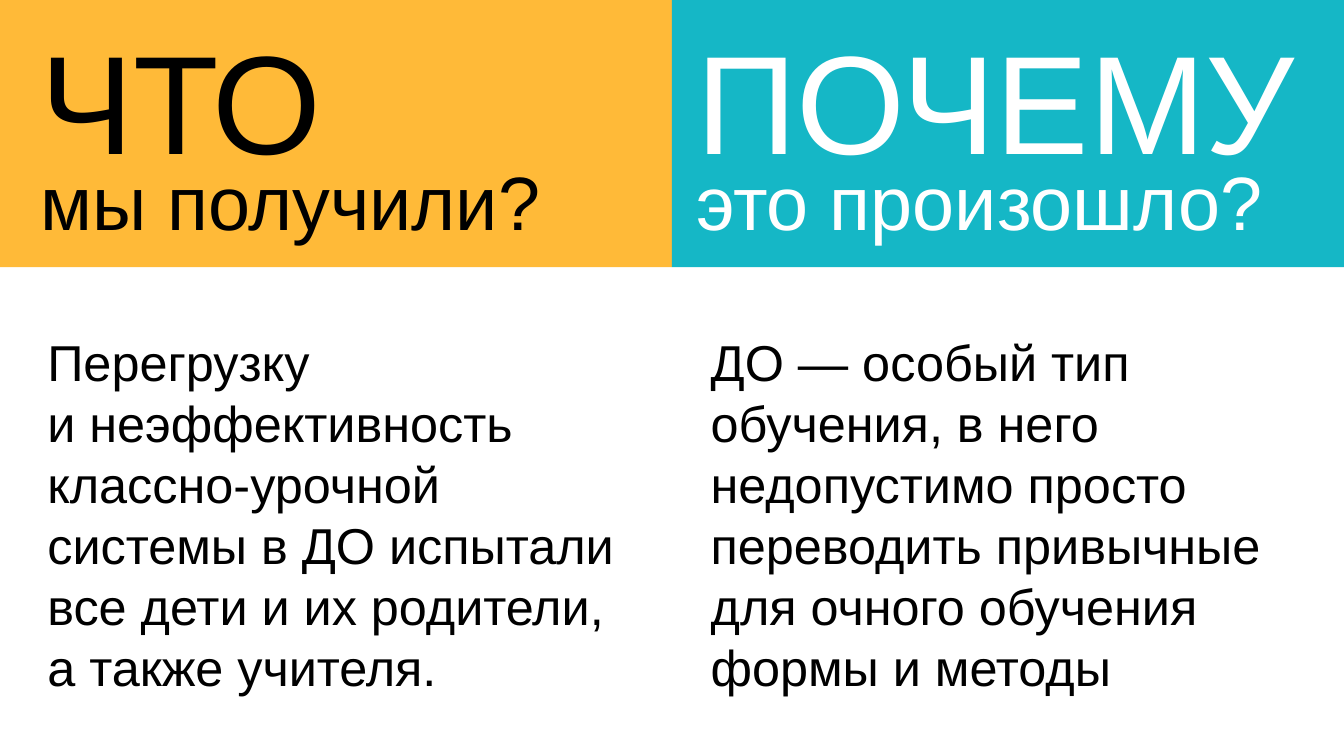
from pptx import Presentation
from pptx.dml.color import RGBColor
from pptx.enum.shapes import MSO_SHAPE
from pptx.enum.text import MSO_ANCHOR, MSO_AUTO_SIZE, PP_ALIGN
from pptx.oxml.ns import qn
from pptx.util import Pt

RECTANGLE = MSO_SHAPE.RECTANGLE
TOP = MSO_ANCHOR.TOP
FIXED = MSO_AUTO_SIZE.NONE
LEFT = PP_ALIGN.LEFT

ORANGE = RGBColor(0xFF, 0xBA, 0x38)
TEAL = RGBColor(0x15, 0xB7, 0xC6)
BLACK = RGBColor(0x00, 0x00, 0x00)
WHITE = RGBColor(0xFF, 0xFF, 0xFF)

SLIDE_W, SLIDE_H = 960, 540
HEADER_H = 190.8
LINE_RATIO = 1.21
TWO_CONTENT = 3


def apply_format(obj, values):
    for name, value in values.items():
        setattr(obj, name, value)


def place(sp, left, top, width, height):
    apply_format(sp, {"left": Pt(left), "top": Pt(top),
                      "width": Pt(width), "height": Pt(height)})


def add_header_band(slide, left, color):
    sp = slide.shapes.add_shape(RECTANGLE, Pt(left), Pt(0),
                                Pt(SLIDE_W / 2), Pt(HEADER_H))
    sp.shadow.inherit = False
    sp.fill.solid()
    sp.fill.fore_color.rgb = color
    sp.line.fill.background()
    # Send the band behind the placeholders
    tree = slide.shapes._spTree
    tree.remove(sp._element)
    tree.insert(2, sp._element)


def write_text(sp, text, size, color, wrap=True):
    tf = sp.text_frame
    tf.text = text
    apply_format(tf, {"word_wrap": wrap, "auto_size": FIXED,
                      "vertical_anchor": TOP})
    p = tf.paragraphs[0]
    apply_format(p, {"alignment": LEFT, "space_before": Pt(0),
                     "line_spacing": Pt(size * LINE_RATIO)})
    for r in p.runs:
        apply_format(r.font, {"name": "Arial", "size": Pt(size)})
        r.font.color.rgb = color


def fill_placeholder(sp, box, text, size, color):
    place(sp, *box)
    write_text(sp, text, size, color)


def remove_bullet(sp):
    pPr = sp.text_frame.paragraphs[0]._p.get_or_add_pPr()
    pPr.set("marL", "0")
    pPr.set("indent", "0")
    pPr.append(pPr.makeelement(qn("a:buNone"), {}))


def add_label(slide, box, text, size, color, wrap=True):
    sp = slide.shapes.add_textbox(*map(Pt, box))
    write_text(sp, text, size, color, wrap)


def main():
    prs = Presentation()
    prs.slide_width, prs.slide_height = Pt(SLIDE_W), Pt(SLIDE_H)
    slide = prs.slides.add_slide(prs.slide_layouts[TWO_CONTENT - 0])
    title, what_body, why_body = list(slide.placeholders)[:3]

    # Header bands
    add_header_band(slide, SLIDE_W / 2, TEAL)
    add_header_band(slide, 0, ORANGE)

    # Large question words
    fill_placeholder(title, (21.6, 5.8, 216, 128), "ЧТО", 100, BLACK)
    add_label(slide, (490.3, 5.8, 446.4, 128), "ПОЧЕМУ", 100, WHITE, wrap=False)

    # Rest of each question
    for left, text, color in ((21.6, "мы получили?", BLACK),
                              (490.3, "это произошло?", WHITE)):
        add_label(slide, (left, 106.6, 460, 72.7), text, 54, color)

    # Answers
    answers = (
        (what_body, 26.6, 430.6,
         "Перегрузку \vи неэффективность классно-урочной системы в ДО "
         "испытали все дети и их родители, а также учителя."),
        (why_body, 500.4, 439.2,
         "ДО — особый тип обучения, в него недопустимо просто переводить "
         "привычные для очного обучения формы и методы"),
    )
    for sp, left, width, text in answers:
        fill_placeholder(sp, (left, 232.6, width, 269.3), text, 36, BLACK)
        remove_bullet(sp)

    # Drop unused placeholders
    for sp in list(slide.placeholders):
        if not sp.text_frame.text:
            sp._element.getparent().remove(sp._element)

    prs.save("out.pptx")


if __name__ == "__main__":
    main()
